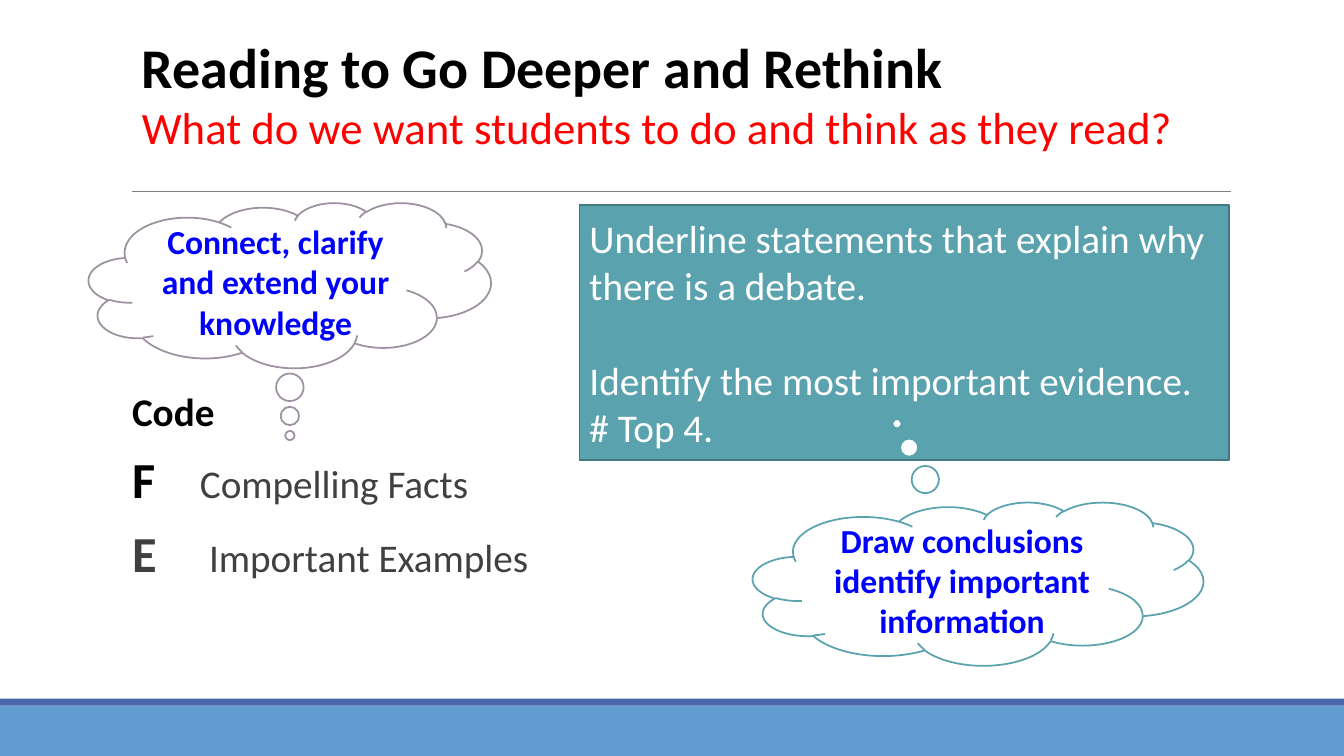
from dataclasses import dataclass

from lxml.etree import SubElement
from pptx import Presentation
from pptx.dml.color import RGBColor
from pptx.enum.shapes import MSO_CONNECTOR, MSO_SHAPE
from pptx.enum.text import MSO_ANCHOR, PP_ALIGN
from pptx.oxml.ns import qn
from pptx.util import Pt


@dataclass(frozen=True)
class Theme:
    font: str = "Calibri"
    black: str = "000000"
    white: str = "FFFFFF"
    gray: str = "404040"
    red: str = "FF0000"
    blue: str = "0000FF"
    rule: str = "808080"
    footer: str = "629DD1"
    footer_edge: str = "4A66AC"
    teal: str = "5AA2AE"
    teal_edge: str = "437881"
    mauve: str = "9D90A0"
    title_size: int = 40
    letter_size: int = 36
    subtitle_size: int = 32
    text_size: int = 28
    cloud_size: int = 24
    outline: float = 1.25


THEME = Theme()


def color(value):
    return RGBColor.from_string(value)


def style_run(run, size, text_color, bold=False):
    run.font.name = THEME.font
    run.font.size = Pt(size)
    run.font.color.rgb = color(text_color)
    run.font.bold = bold


def add_panel(slide, kind, box, fill, line=None):
    shape = slide.shapes.add_shape(kind, *map(Pt, box))
    shape.shadow.inherit = False
    shape.fill.solid()
    shape.fill.fore_color.rgb = color(fill)
    if line:
        shape.line.color.rgb = color(line)
        shape.line.width = Pt(THEME.outline)
    else:
        shape.line.fill.background()
    shape.text_frame.word_wrap = True
    shape.text_frame.vertical_anchor = MSO_ANCHOR.MIDDLE
    return shape


def add_text_box(slide, box):
    text_frame = slide.shapes.add_textbox(*map(Pt, box)).text_frame
    text_frame.word_wrap = True
    return text_frame


# Footer bar with a darker strip along its top
def add_footer(slide, box):
    left, top, width, height = box
    strip = 5
    add_panel(slide, MSO_SHAPE.RECTANGLE,
              (left, top + strip, width, height - strip), THEME.footer)
    add_panel(slide, MSO_SHAPE.RECTANGLE,
              (left, top, width, strip), THEME.footer_edge)


# Title, subtitle and the rule below them
def add_heading(slide, box, title, subtitle):
    left, top, width, height = box
    text_frame = add_text_box(slide, box)
    text_frame.text = f"{title}\n{subtitle}"
    first, second = text_frame.paragraphs
    style_run(first.runs[0], THEME.title_size, THEME.black, True)
    style_run(second.runs[0], THEME.subtitle_size, THEME.red)

    rule_top = Pt(top + height + 23)
    rule = slide.shapes.add_connector(MSO_CONNECTOR.STRAIGHT, Pt(left), rule_top,
                                      Pt(left + width - 7), rule_top)
    rule.line.color.rgb = color(THEME.rule)
    rule.line.width = Pt(0.5)
    SubElement(rule._element.spPr, qn("a:effectLst"))


# Code letters with their meanings, aligned by a tab stop
def add_code_key(slide, box, heading, entries):
    text_frame = add_text_box(slide, box)
    text_frame.margin_left = text_frame.margin_right = 0
    text_frame.text = heading
    style_run(text_frame.paragraphs[0].runs[0], THEME.text_size, THEME.black, True)
    for letter, meaning, letter_color, tab in entries:
        paragraph = text_frame.add_paragraph()
        paragraph.text = letter
        style_run(paragraph.runs[0], THEME.letter_size, letter_color, True)
        run = paragraph.add_run()
        run.text = f"\t{meaning}"
        style_run(run, THEME.text_size, THEME.gray)
        tab_list = SubElement(paragraph._p.get_or_add_pPr(), qn("a:tabLst"))
        SubElement(tab_list, qn("a:tab"), pos=str(Pt(tab)), algn="l")
    for paragraph in text_frame.paragraphs:
        paragraph.line_spacing = 0.9
        paragraph.space_before = Pt(12)
        paragraph.space_after = Pt(2)


# Filled box of reading instructions
def add_instructions(slide, box, instructions):
    shape = add_panel(slide, MSO_SHAPE.RECTANGLE, box, THEME.teal, THEME.teal_edge)
    shape.text_frame.text = "\n".join(instructions)
    for index, paragraph in enumerate(shape.text_frame.paragraphs):
        paragraph.alignment = PP_ALIGN.LEFT
        if index:
            paragraph.space_before = Pt(34)
        style_run(paragraph.runs[0], THEME.text_size, THEME.white)


# Thought cloud; tail is its tip, as shares of the size from the centre
def add_thought(slide, box, text, line, tail):
    shape = add_panel(slide, MSO_SHAPE.CLOUD_CALLOUT, box, THEME.white, line)
    for index, share in enumerate(tail):
        shape.adjustments[index] = share
    shape.text_frame.text = text
    paragraph = shape.text_frame.paragraphs[0]
    paragraph.alignment = PP_ALIGN.CENTER
    style_run(paragraph.runs[0], THEME.cloud_size, THEME.blue, True)


def main():
    presentation = Presentation()
    presentation.slide_width, presentation.slide_height = Pt(960), Pt(540)
    slide = presentation.slides.add_slide(presentation.slide_layouts[6])

    add_footer(slide, (0, 499, 960, 41))
    add_heading(slide, (94.3, 19.5, 792, 94.3), "Reading to Go Deeper and Rethink",
                "What do we want students to do and think as they read?")
    add_code_key(slide, (94.3, 277.2, 286, 251), "Code", [
        ("F", "Compelling Facts", THEME.black, 48.5),
        ("E", "Important Examples", THEME.gray, 55),
    ])
    add_thought(slide, (63.4, 144.7, 287.3, 118),
                "Connect, clarify and extend your knowledge",
                THEME.mauve, (0, 0.91))
    add_instructions(slide, (414, 146.2, 463.7, 182.2), [
        "Underline statements that explain why there is a debate.",
        "Identify the most important evidence. # Top 4.",
    ])
    add_thought(slide, (537.8, 358.6, 321.8, 116.6),
                "Draw conclusions identify important information",
                THEME.teal, (-0.18, -0.98))

    presentation.save("out.pptx")


if __name__ == "__main__":
    main()
